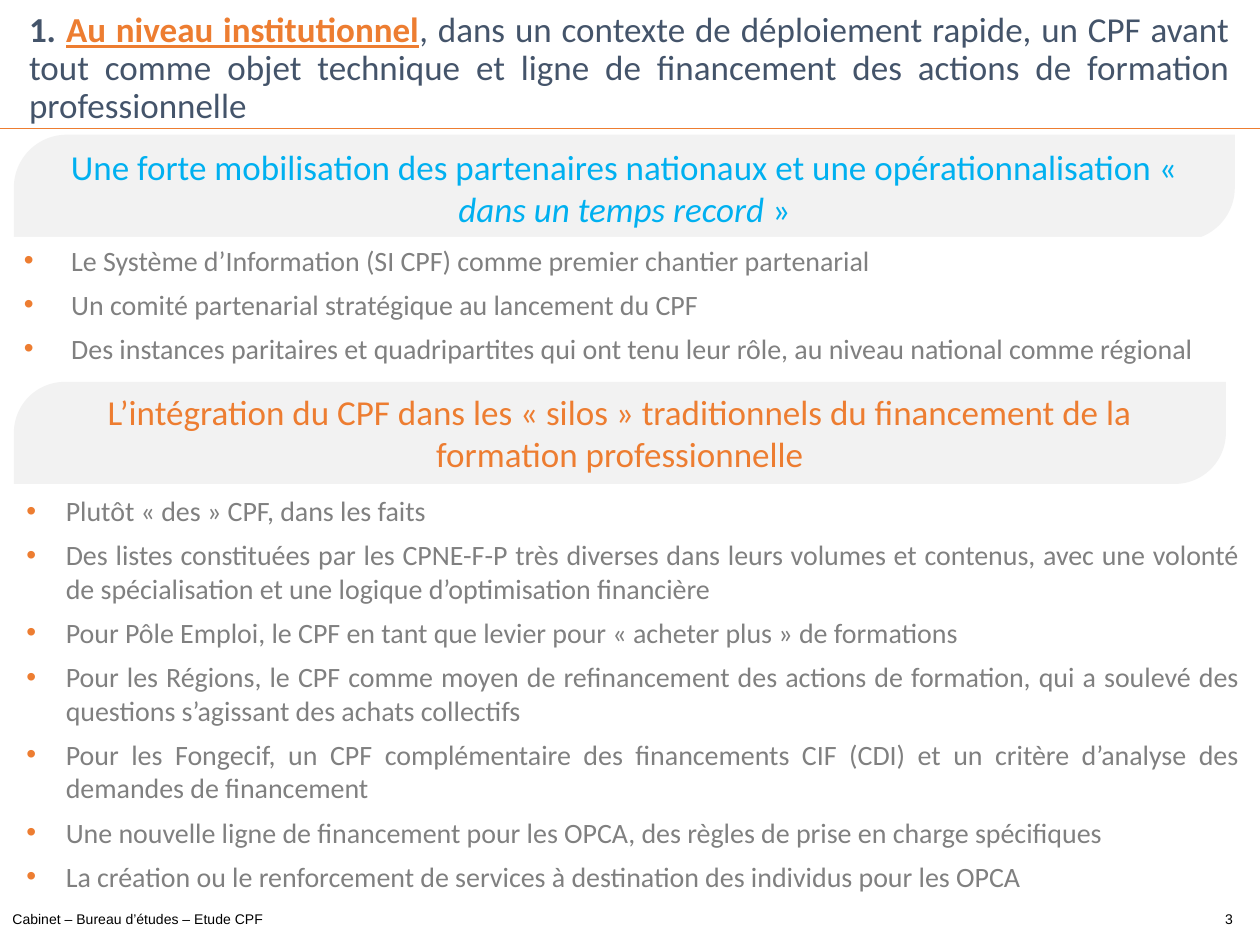
from lxml import etree
from pptx import Presentation
from pptx.dml.color import RGBColor
from pptx.enum.shapes import MSO_CONNECTOR, MSO_SHAPE
from pptx.enum.text import MSO_ANCHOR, MSO_AUTO_SIZE, PP_ALIGN
from pptx.oxml.ns import qn
from pptx.util import Pt

LEFT, CENTER, JUSTIFY = PP_ALIGN.LEFT, PP_ALIGN.CENTER, PP_ALIGN.JUSTIFY
TOP, MIDDLE = MSO_ANCHOR.TOP, MSO_ANCHOR.MIDDLE
NO_AUTOFIT = MSO_AUTO_SIZE.NONE
STRAIGHT = MSO_CONNECTOR.STRAIGHT
BANNER_SHAPE = MSO_SHAPE.ROUND_2_DIAG_RECTANGLE
TWO_CONTENT = 3

COLOURS = {
    "orange": "ED7D31",
    "blue": "00B0F0",
    "navy": "44546A",
    "grey": "808080",
    "pale": "F2F2F2",
    "white": "FFFFFF",
    "black": "000000",
}

TITLE = [
    ("1. ", {"bold": True}),
    ("Au niveau institutionnel", {"bold": True, "underline": True, "color": "orange"}),
    (", dans un contexte de déploiement rapide, un CPF avant tout comme objet technique "
     "et ligne de financement des actions de formation professionnelle", {"bold": False}),
]
MOBILISATION = [
    ("Une forte mobilisation des partenaires nationaux et une opérationnalisation « ", {}),
    ("dans un temps record", {"italic": True}),
    (" »", {}),
]
MOBILISATION_POINTS = [
    "Le Système d’Information (SI CPF) comme premier chantier partenarial",
    "Un comité partenarial stratégique au lancement du CPF",
    "Des instances paritaires et quadripartites qui ont tenu leur rôle, au niveau national "
    "comme régional",
]
INTEGRATION = [
    ("L’intégration du CPF dans les « silos » traditionnels du financement de la formation "
     "professionnelle", {}),
]
INTEGRATION_POINTS = [
    "Plutôt « des » CPF, dans les faits",
    "Des listes constituées par les CPNE-F-P très diverses dans leurs volumes et contenus, "
    "avec une volonté de spécialisation et une logique d’optimisation financière",
    "Pour Pôle Emploi, le CPF en tant que levier pour « acheter plus » de formations",
    "Pour les Régions, le CPF comme moyen de refinancement des actions de formation, qui a "
    "soulevé des questions s’agissant des achats collectifs",
    "Pour les Fongecif, un CPF complémentaire des financements CIF (CDI) et un critère "
    "d’analyse des demandes de financement",
    "Une nouvelle ligne de financement pour les OPCA, des règles de prise en charge spécifiques",
    "La création ou le renforcement de services à destination des individus pour les OPCA",
]


def rgb(name):
    return RGBColor.from_string(COLOURS[name])


def set_values(target, values):
    for name, value in values.items():
        setattr(target, name, value)


def place(shape, left, top, width, height):
    set_values(shape, {"left": Pt(left), "top": Pt(top),
                       "width": Pt(width), "height": Pt(height)})


def prepare_frame(shape, anchor, side=7.2, edge=3.6):
    frame = shape.text_frame
    set_values(frame, {
        "word_wrap": True, "auto_size": NO_AUTOFIT, "vertical_anchor": anchor,
        "margin_left": Pt(side), "margin_right": Pt(side),
        "margin_top": Pt(edge), "margin_bottom": Pt(edge),
    })
    return frame


def write(para, spans, size, color, font="Calibri", **layout):
    """Fill a paragraph with (text, format) spans."""
    set_values(para, {"space_before": Pt(0), "line_spacing": 1.0, **layout})
    for text, values in spans:
        span = para.add_run()
        span.text = text
        extra = dict(values)
        span.font.color.rgb = rgb(extra.pop("color", color))
        set_values(span.font, {"name": font, "size": Pt(size), **extra})


def add_bullet(para, indent):
    properties = para._p.get_or_add_pPr()
    properties.set("marL", str(Pt(indent)))
    properties.set("indent", str(-Pt(indent)))
    color = etree.SubElement(properties, qn("a:buClr"))
    etree.SubElement(color, qn("a:srgbClr"), val=COLOURS["orange"])
    etree.SubElement(properties, qn("a:buFont"), typeface="Arial")
    etree.SubElement(properties, qn("a:buChar"), char="•")


def add_rule(page, top):
    rule = page.shapes.add_connector(STRAIGHT, Pt(0), Pt(top), Pt(720), Pt(top))
    rule.line.color.rgb = rgb("orange")
    rule.line.width = Pt(1)
    etree.SubElement(rule._element.spPr, qn("a:effectLst"))


def add_footer(page, text, area, align):
    box = page.shapes.add_textbox(*map(Pt, area))
    frame = prepare_frame(box, MIDDLE)
    write(frame.paragraphs[0], [(text, {})], 8, "black", "Arial",
          alignment=align, line_spacing=0.85)


def fill_title(page):
    title = page.shapes.title
    place(title, -0.7, 4.3, 720.7, 70.6)
    frame = prepare_frame(title, MIDDLE, 17.3, 2.9)
    write(frame.paragraphs[0], TITLE, 20, "navy", alignment=JUSTIFY, line_spacing=0.9)


def add_banner(page, spans, color, area):
    banner = page.shapes.add_shape(BANNER_SHAPE, *map(Pt, area))
    banner.adjustments[0] = 0.5
    banner.adjustments[1] = 0
    banner.shadow.inherit = False
    banner.fill.solid()
    banner.fill.fore_color.rgb = rgb("pale")
    banner.line.fill.background()
    frame = prepare_frame(banner, MIDDLE)
    write(frame.paragraphs[0], spans, 20, color, alignment=CENTER)


def fill_list(page, index, points, indent, area):
    body = page.placeholders[index]
    place(body, *area)
    body.fill.solid()
    body.fill.fore_color.rgb = rgb("white")
    frame = prepare_frame(body, TOP)
    for number, point in enumerate(points):
        para = frame.add_paragraph() if number else frame.paragraphs[0]
        write(para, [(point, {})], 16, "grey", alignment=JUSTIFY, space_before=Pt(6))
        add_bullet(para, indent)
    # The list lies over the lower edge of the banner above it
    page.shapes._spTree.append(body._element)


def main():
    deck = Presentation()
    deck.slide_width, deck.slide_height = Pt(720), Pt(540)
    page = deck.slides.add_slide(deck.slide_layouts[TWO_CONTENT])

    # Heading and page furniture
    add_rule(page, 73.4)
    add_footer(page, "Cabinet – Bureau d’études – Etude CPF", (0, 512, 684.7, 28), LEFT)
    add_footer(page, "3", (684.7, 511.2, 35.3, 28.8), CENTER)
    fill_title(page)

    # Two themes, each a banner with its list
    add_banner(page, MOBILISATION, "blue", (7.9, 77, 697.7, 60.5))
    fill_list(page, 1, MOBILISATION_POINTS, 27, (6.5, 135.4, 707.8, 79.9))
    add_banner(page, INTEGRATION, "orange", (7.9, 218.2, 692.6, 58.3))
    fill_list(page, 2, INTEGRATION_POINTS, 22.5, (7.9, 278.6, 707.8, 234.7))

    deck.save("out.pptx")


if __name__ == "__main__":
    main()
